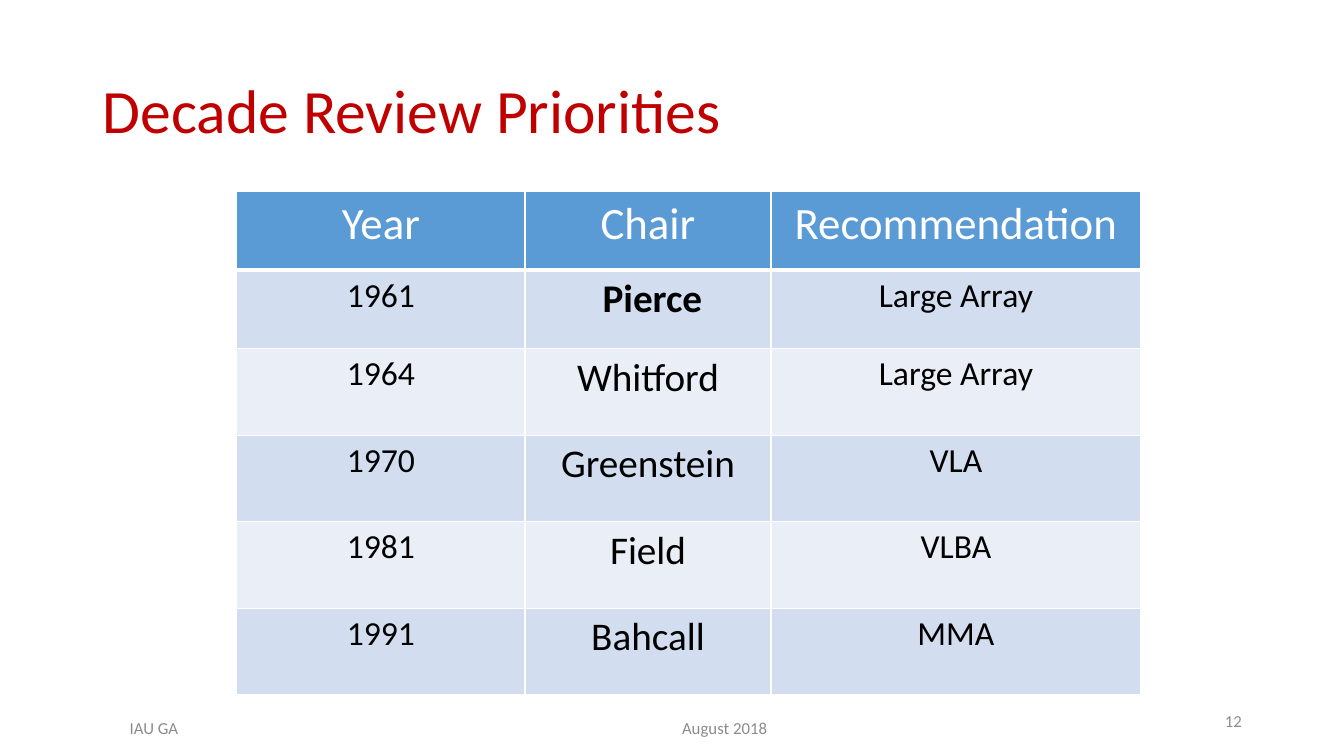
from dataclasses import dataclass

import pptx
import pptx.dml.color
import pptx.enum.text
import pptx.oxml
import pptx.oxml.ns
import pptx.util
from pptx.util import Cm

ALIGN = pptx.enum.text.PP_ALIGN
FONT = "Calibri"
COLORS = {
    "title": "C00000",
    "header": "5B9BD5",
    "band_dark": "D2DEEF",
    "band_light": "EAEFF7",
    "white": "FFFFFF",
    "black": "000000",
    "footer": "8C8C8C",
}


@dataclass
class Label:
    text: str
    left: float
    top: float
    width: float
    height: float
    size: int
    color: str
    align: ALIGN = ALIGN.LEFT
    spacing: float = 1.0


LABELS = [
    Label("Decade Review Priorities", 2.34, 1.02, 29.21, 3.68, 44, "title", spacing=0.9),
    Label("IAU GA", 3.02, 17.65, 4, 1.4, 12, "footer"),
    Label("August 2018", 16.94, 17.65, 5, 1.4, 12, "footer"),
    Label("12", 23.93, 17.65, 7.62, 1.02, 12, "footer", ALIGN.RIGHT),
]

ROWS = [
    ("Year", "Chair", "Recommendation"),
    ("1961", " Pierce", "Large Array"),
    ("1964", "Whitford", "Large Array"),
    ("1970", "Greenstein", "VLA"),
    ("1981", "Field", "VLBA"),
    ("1991", "Bahcall", "MMA"),
]
COL_WIDTHS = (7.26, 6.2, 9.32)
ROW_HEIGHTS = (1.98, 1.98, 2.18, 2.18, 2.18, 2.18)
HEADER_SIZE = 32
BODY_SIZES = (24, 28, 24)


def rgb(name: str) -> pptx.dml.color.RGBColor:
    return pptx.dml.color.RGBColor.from_string(COLORS[name])


def style_paragraph(p, size: int, color: str, align: ALIGN, bold: bool = False) -> None:
    p.alignment = align
    p.font.name = FONT
    p.font.size = pptx.util.Pt(size)
    p.font.bold = bold
    p.font.color.rgb = rgb(color)


def add_label(s, label: Label) -> None:
    sp = s.shapes.add_textbox(Cm(label.left), Cm(label.top), Cm(label.width), Cm(label.height))
    tf = sp.text_frame
    tf.word_wrap = True
    tf.vertical_anchor = pptx.enum.text.MSO_ANCHOR.MIDDLE
    p = tf.paragraphs[0]
    p.text = label.text
    p.line_spacing = label.spacing
    style_paragraph(p, label.size, label.color, label.align)


def set_borders(cell, bottom: int) -> None:
    tc_pr = cell._tc.get_or_add_tcPr()
    widths = {"lnL": 1, "lnR": 1, "lnT": 1, "lnB": bottom}
    for i, (tag, width) in enumerate(widths.items()):
        line = pptx.oxml.parse_xml(
            f'<a:{tag} {pptx.oxml.ns.nsdecls("a")} w="{pptx.util.Pt(width)}">'
            f'<a:solidFill><a:srgbClr val="{COLORS["white"]}"/></a:solidFill></a:{tag}>'
        )
        tc_pr.insert(i, line)


def add_review_table(s) -> None:
    frame = s.shapes.add_table(
        len(ROWS), len(COL_WIDTHS), Cm(5.97), Cm(4.83), Cm(sum(COL_WIDTHS)), Cm(sum(ROW_HEIGHTS))
    )
    table = frame.table
    table.first_row = False
    table.horz_banding = False
    for column, width in zip(table.columns, COL_WIDTHS):
        column.width = Cm(width)
    for row, height in zip(table.rows, ROW_HEIGHTS):
        row.height = Cm(height)

    for r, texts in enumerate(ROWS):
        header = r == 0
        fill = "header" if header else "band_dark" if r % 2 else "band_light"
        for c, text in enumerate(texts):
            cell = table.cell(r, c)
            cell.fill.solid()
            cell.fill.fore_color.rgb = rgb(fill)
            set_borders(cell, bottom=3 if header else 1)
            p = cell.text_frame.paragraphs[0]
            p.text = text
            style_paragraph(
                p,
                HEADER_SIZE if header else BODY_SIZES[c],
                "white" if header else "black",
                ALIGN.CENTER,
                bold=(r, c) == (1, 1),
            )


def main() -> None:
    prs = pptx.Presentation()
    prs.slide_width, prs.slide_height = Cm(33.87), Cm(19.05)
    s = prs.slides.add_slide(prs.slide_layouts[6])

    # Title, footer and slide number
    for label in LABELS:
        add_label(s, label)

    # Table of reviews
    add_review_table(s)

    prs.save("out.pptx")


if __name__ == "__main__":
    main()
